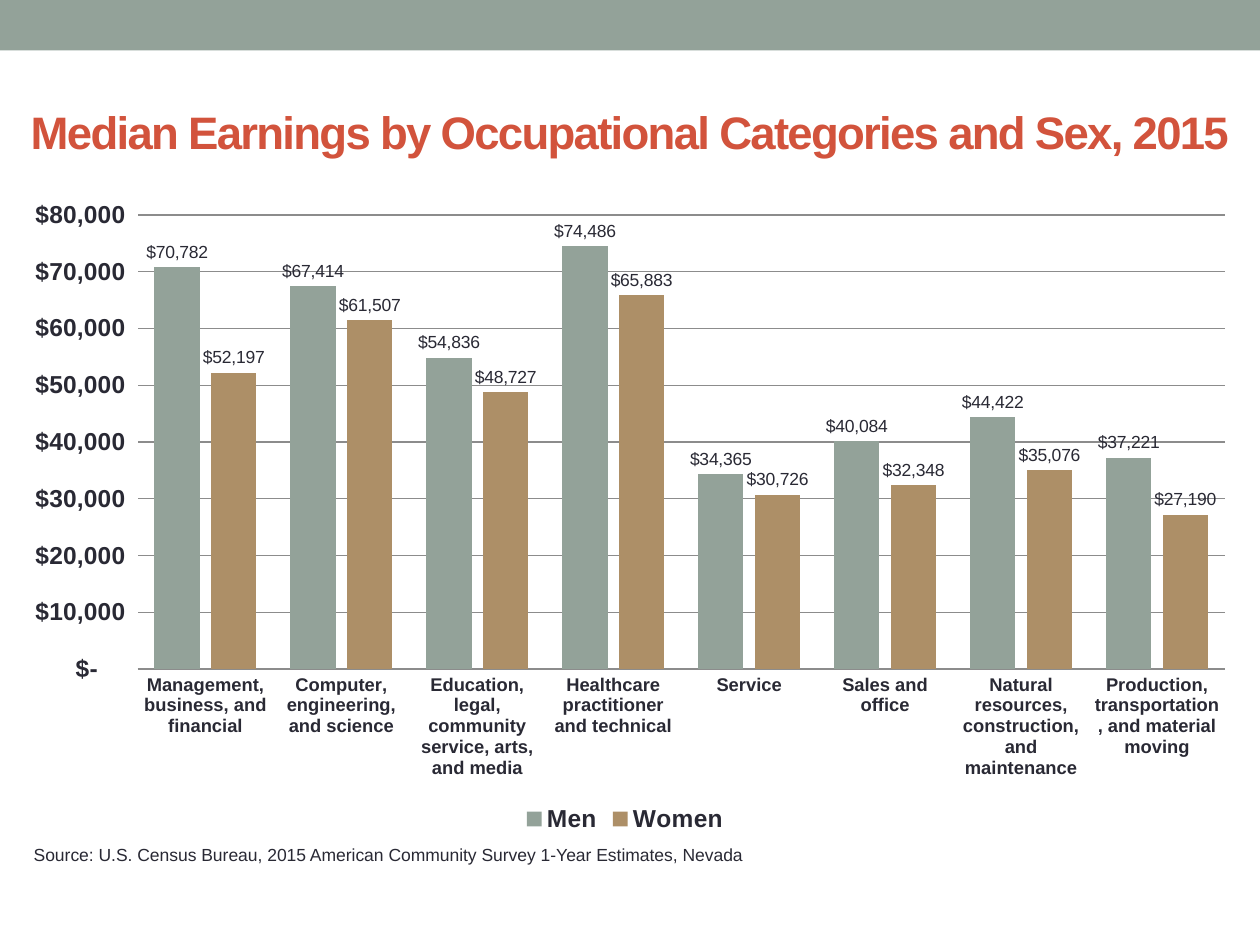
from dataclasses import dataclass

from lxml import etree
from pptx import Presentation
from pptx.chart.data import CategoryChartData
from pptx.dml.color import RGBColor
from pptx.enum.chart import XL_CHART_TYPE, XL_LABEL_POSITION, XL_LEGEND_POSITION, XL_TICK_MARK
from pptx.enum.shapes import MSO_SHAPE
from pptx.enum.text import MSO_ANCHOR, PP_ALIGN
from pptx.oxml.ns import qn
from pptx.util import Cm, Pt

COLUMNS = XL_CHART_TYPE.COLUMN_CLUSTERED
LABEL_ABOVE = XL_LABEL_POSITION.OUTSIDE_END
LEGEND_BOTTOM = XL_LEGEND_POSITION.BOTTOM
NO_TICK = XL_TICK_MARK.NONE
RECTANGLE = MSO_SHAPE.RECTANGLE
MIDDLE = MSO_ANCHOR.MIDDLE
CENTER = PP_ALIGN.CENTER
LEFT = PP_ALIGN.LEFT


@dataclass(frozen=True)
class Theme:
    font: str = "Arial"
    text: RGBColor = RGBColor(0x29, 0x29, 0x34)
    title: RGBColor = RGBColor(0xD2, 0x53, 0x3C)
    sage: RGBColor = RGBColor(0x93, 0xA2, 0x99)
    tan: RGBColor = RGBColor(0xAD, 0x8F, 0x67)
    grid: RGBColor = RGBColor(0x8C, 0x8C, 0x8C)
    title_size: Pt = Pt(26)
    axis_size: Pt = Pt(14)
    category_size: Pt = Pt(10.5)
    body_size: Pt = Pt(10)


THEME = Theme()
DOLLARS = r'_("$"* #,##0_);_("$"* \(#,##0\);_("$"* "-"??_);_(@_)'
CATEGORIES = [
    "Management, business, and financial",
    "Computer, engineering, and science",
    "Education, legal, community service, arts, and media",
    "Healthcare practitioner and technical",
    "Service",
    "Sales and office",
    "Natural resources, construction, and maintenance",
    "Production, transportation, and material moving",
]
EARNINGS = {
    "Men": (THEME.sage, [70782, 67414, 54836, 74486, 34365, 40084, 44422, 37221]),
    "Women": (THEME.tan, [52197, 61507, 48727, 65883, 30726, 32348, 35076, 27190]),
}
PLOT_AREA = {"x": 0.11, "y": 0.04, "w": 0.87, "h": 0.7}


def set_font(font, size, color=THEME.text, bold=False):
    font.name = THEME.font
    font.size = size
    font.bold = bold
    font.color.rgb = color


def add_run(paragraph, text, size, color=THEME.text, bold=False):
    run = paragraph.add_run()
    run.text = text
    set_font(run.font, size, color, bold)
    return run


def add_band(slide, width):
    band = slide.shapes.add_shape(RECTANGLE, 0, 0, width, Cm(1.02))
    band.shadow.inherit = False
    band.fill.solid()
    band.fill.fore_color.rgb = THEME.sage
    band.line.fill.background()


def format_title(slide, text, width):
    title = slide.shapes.title
    title.left, title.top, title.width, title.height = 0, Cm(1.27), width, Cm(2.74)
    title.text_frame.vertical_anchor = MIDDLE
    paragraph = title.text_frame.paragraphs[0]
    paragraph.alignment = CENTER
    run = add_run(paragraph, text, THEME.title_size, THEME.title, bold=True)
    run.font._element.set("spc", "-100")


def fix_plot_area(chart):
    """Place the inner plot area by fractions of the chart frame."""
    plot_area = chart._chartSpace.chart.plotArea
    for old_layout in plot_area.findall(qn("c:layout")):
        plot_area.remove(old_layout)
    layout = etree.Element(qn("c:layout"))
    plot_area.insert(0, layout)
    manual = etree.SubElement(layout, qn("c:manualLayout"))
    settings = {"layoutTarget": "inner", "xMode": "edge", "yMode": "edge", **PLOT_AREA}
    for name, value in settings.items():
        etree.SubElement(manual, qn(f"c:{name}")).set("val", str(value))


def format_axes(chart):
    category_axis = chart.category_axis
    category_axis.major_tick_mark = NO_TICK
    category_axis.format.line.color.rgb = THEME.grid
    set_font(category_axis.tick_labels.font, THEME.category_size, bold=True)

    value_axis = chart.value_axis
    value_axis.minimum_scale, value_axis.maximum_scale = 0, 80000
    value_axis.major_unit = 10000
    value_axis.major_tick_mark = NO_TICK
    value_axis.format.line.fill.background()
    gridline = value_axis.major_gridlines.format.line
    gridline.color.rgb = THEME.grid
    gridline.width = Pt(0.75)
    labels = value_axis.tick_labels
    labels.number_format = DOLLARS
    labels.number_format_is_linked = False
    set_font(labels.font, THEME.axis_size, bold=True)


def format_series(series, color):
    series.format.fill.solid()
    series.format.fill.fore_color.rgb = color
    labels = series.data_labels
    labels.show_value = True
    labels.position = LABEL_ABOVE
    labels.number_format = DOLLARS
    labels.number_format_is_linked = False
    set_font(labels.font, THEME.body_size)


def add_earnings_chart(slide):
    data = CategoryChartData(number_format=DOLLARS)
    data.categories = CATEGORIES
    for name, (_, values) in EARNINGS.items():
        data.add_series(name, values)
    frame = slide.shapes.add_chart(COLUMNS, 0, Cm(3.81), Cm(25.2), Cm(13.08), data)
    chart = frame.chart
    chart.has_title = False
    set_font(chart.font, THEME.body_size)

    plot = chart.plots[0]
    plot.gap_width, plot.overlap = 75, -25
    plot.vary_by_categories = False
    for series in plot.series:
        format_series(series, EARNINGS[series.name][0])

    format_axes(chart)
    chart.has_legend = True
    chart.legend.position = LEGEND_BOTTOM
    chart.legend.include_in_layout = False
    set_font(chart.legend.font, THEME.axis_size, bold=True)
    fix_plot_area(chart)


def add_source_note(slide, text):
    box = slide.shapes.add_textbox(Cm(0.43), Cm(16.89), Cm(23.06), Cm(0.69))
    box.text_frame.word_wrap = True
    paragraph = box.text_frame.paragraphs[0]
    paragraph.alignment = LEFT
    add_run(paragraph, text, THEME.body_size)


def main():
    presentation = Presentation()
    presentation.slide_width, presentation.slide_height = Cm(25.4), Cm(19.05)
    slide = presentation.slides.add_slide(presentation.slide_layouts[5])
    width = presentation.slide_width
    add_band(slide, width)
    format_title(slide, "Median Earnings by Occupational Categories and Sex, 2015", width)
    add_earnings_chart(slide)
    add_source_note(
        slide,
        "Source: U.S. Census Bureau, 2015 American Community Survey 1-Year Estimates, Nevada",
    )
    presentation.save("out.pptx")


if __name__ == "__main__":
    main()
